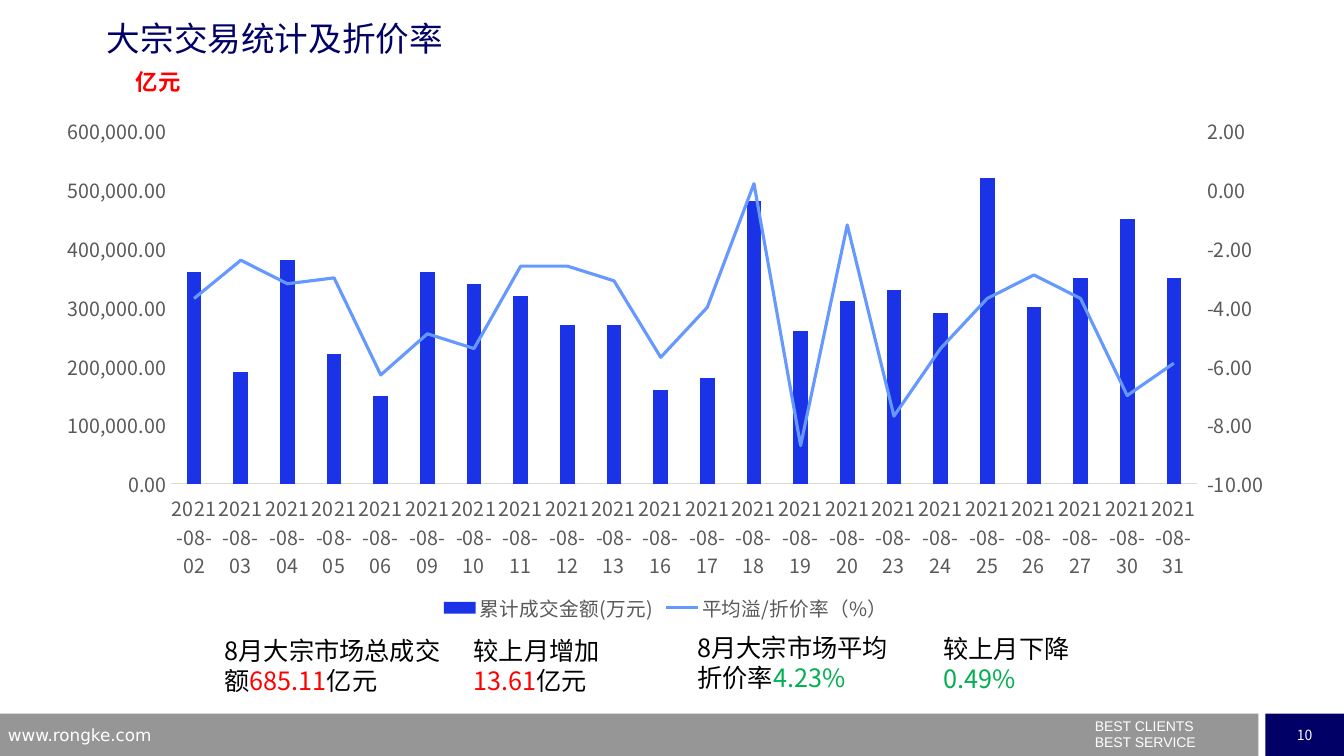
from lxml import etree
from pptx import Presentation
from pptx import util as u
from pptx.chart import data as chart_data
from pptx.dml.color import RGBColor
from pptx.enum import chart as c
from pptx.enum import shapes, text
from pptx.oxml import parse_xml
from pptx.oxml.ns import nsdecls, qn

NAVY = RGBColor(0x00, 0x00, 0x66)
GREY = RGBColor(0x96, 0x96, 0x96)
WHITE = RGBColor(0xFF, 0xFF, 0xFF)
BLACK = RGBColor(0x00, 0x00, 0x00)
RED = RGBColor(0xFF, 0x00, 0x00)
GREEN = RGBColor(0x00, 0xB0, 0x50)
AXIS_TEXT = RGBColor(0x59, 0x59, 0x59)
AXIS_LINE = RGBColor(0xD9, 0xD9, 0xD9)
BAR_BLUE = RGBColor(0x1B, 0x33, 0xE7)
LINE_BLUE = RGBColor(0x66, 0x99, 0xFF)
CJK = "Noto Sans CJK SC"


def write(frame, paragraphs, size=18, color=BLACK, font=CJK, bold=False,
          align=text.PP_ALIGN.LEFT, anchor=text.MSO_ANCHOR.TOP, wrap=True):
    """Each paragraph is a list of strings or (string, color) pairs."""
    frame.word_wrap = wrap
    frame.vertical_anchor = anchor
    for index, pieces in enumerate(paragraphs):
        paragraph = frame.add_paragraph() if index else frame.paragraphs[0]
        paragraph.alignment = align
        for piece in pieces:
            words, tint = (piece, color) if isinstance(piece, str) else piece
            run = paragraph.add_run()
            run.text = words
            run.font.size = u.Pt(size)
            run.font.name = font
            run.font.bold = bold
            run.font.color.rgb = tint
            etree.SubElement(run.font._element, qn("a:ea")).set("typeface", font)
    return frame


def style_font(font, color=AXIS_TEXT):
    font.size = u.Pt(14)
    font.name = CJK
    font.color.rgb = color


prs = Presentation()
prs.slide_width = u.Inches(13.33)
prs.slide_height = u.Inches(7.5)
slide = prs.slides.add_slide(prs.slide_layouts[5])

# Footer bars
footer_bars = []
for left, width, fill in [(0, 12.48, GREY), (12.55, 0.78, NAVY)]:
    bar = slide.shapes.add_shape(shapes.MSO_SHAPE.RECTANGLE, u.Inches(left),
                                 u.Inches(7.08), u.Inches(width), u.Inches(0.42))
    bar.shadow.inherit = False
    bar.fill.solid()
    bar.fill.fore_color.rgb = fill
    bar.line.fill.background()
    footer_bars.append(bar)
write(footer_bars[1].text_frame, [["10"]], size=10, color=WHITE, wrap=False,
      align=text.PP_ALIGN.CENTER, anchor=text.MSO_ANCHOR.MIDDLE)

# Title
title = slide.shapes.title
title.left, title.top = u.Inches(1.06), u.Inches(0.18)
title.width, title.height = u.Inches(3.54), u.Inches(0.51)
heading = write(title.text_frame, [["大宗交易统计及折价率"]], size=24, color=NAVY)
heading.auto_size = text.MSO_AUTO_SIZE.NONE
heading.margin_left = heading.margin_right = 0
heading.margin_top = heading.margin_bottom = 0

# Footer texts, monthly findings and axis unit
captions = [
    (10.76, 7.14, 2.56, 0.36, [["BEST CLIENTS"], ["BEST SERVICE"]],
     dict(size=10, color=WHITE, font="Arial")),
    (-0.02, 7.14, 3.22, 0.26, [["www.rongke.com"]],
     dict(size=12, color=WHITE, font="DejaVu Sans")),
    (2.13, 6.25, 2.38, 0.71, [["8月大宗市场总成交额", ("685.11", RED), "亿元"]], {}),
    (4.6, 6.25, 1.92, 0.71, [["较上月增加"], [("13.61", RED), "亿元"]], {}),
    (6.82, 6.22, 2.17, 0.71, [["8月大宗市场平均折价率", ("4.23%", GREEN)]], {}),
    (9.26, 6.23, 1.65, 0.71, [["较上月下降", ("0.49%", GREEN)]], {}),
    (1.25, 0.63, 0.69, 0.37, [["亿元"]], dict(size=16, color=RED, bold=True)),
]
frames = []
for left, top, width, height, paragraphs, look in captions:
    box = slide.shapes.add_textbox(u.Inches(left), u.Inches(top),
                                   u.Inches(width), u.Inches(height))
    frames.append(write(box.text_frame, paragraphs, **look))
slogan = frames[0].paragraphs
for line in slogan:
    line.line_spacing = 0.5
slogan[1].space_before = u.Pt(5.6)

# Chart data: turnover and average premium/discount per trading day
days = [2, 3, 4, 5, 6, 9, 10, 11, 12, 13, 16, 17, 18, 19, 20, 23, 24, 25, 26, 27, 30, 31]
turnover = [360000, 190000, 380000, 220000, 150000, 360000, 340000, 320000,
            270000, 270000, 160000, 180000, 480000, 260000, 310000, 330000,
            290000, 520000, 300000, 350000, 450000, 350000]
discount = [-3.7, -2.4, -3.2, -3, -6.3, -4.9, -5.4, -2.6, -2.6, -3.1, -5.7,
            -4, 0.2, -8.7, -1.2, -7.7, -5.4, -3.7, -2.9, -3.7, -7, -5.9]
trades = chart_data.CategoryChartData()
trades.categories = [f"2021-08-{day:02d}" for day in days]
trades.add_series("累计成交金额(万元)", turnover, "#,##0.00")
trades.add_series("平均溢/折价率（%）", discount, "0.00")
chart = slide.shapes.add_chart(c.XL_CHART_TYPE.COLUMN_CLUSTERED, u.Inches(0.42),
                               u.Inches(1.05), u.Inches(12.37), u.Inches(5.16),
                               trades).chart
style_font(chart.font, BLACK)
chart.has_title = False
chart.has_legend = True
chart.legend.position = c.XL_LEGEND_POSITION.BOTTOM
chart.legend.include_in_layout = False
style_font(chart.legend.font)

# Columns and left axes
columns = chart.plots[0]
columns.vary_by_categories = False
columns.gap_width = 219
columns.overlap = -27
columns.series[0].format.fill.solid()
columns.series[0].format.fill.fore_color.rgb = BAR_BLUE
amount_axis, date_axis = chart.value_axis, chart.category_axis
for axis in (amount_axis, date_axis):
    axis.has_major_gridlines = False
    axis.major_tick_mark = c.XL_TICK_MARK.NONE
    axis.minor_tick_mark = c.XL_TICK_MARK.NONE
    style_font(axis.tick_labels.font)
amount_axis.minimum_scale, amount_axis.maximum_scale = 0, 600000
amount_axis.major_unit = 100000
amount_axis.tick_labels.number_format = "#,##0.00"
amount_axis.tick_labels.number_format_is_linked = False
amount_axis.format.line.fill.background()
date_axis.tick_label_position = c.XL_TICK_LABEL_POSITION.LOW
date_axis.format.line.color.rgb = AXIS_LINE
date_axis.format.line.width = u.Pt(0.75)

# Discount rate as a line on a second axis
plot_area = chart._chartSpace.chart.plotArea
bar_group = plot_area.find(qn("c:barChart"))
rate = bar_group.findall(qn("c:ser"))[1]
for bar_setting in rate.findall(qn("c:invertIfNegative")):
    rate.remove(bar_setting)
line_group = parse_xml(
    f'<c:lineChart {nsdecls("c")}><c:grouping val="standard"/><c:varyColors val="0"/>'
    '<c:marker val="1"/><c:axId val="5001"/><c:axId val="5002"/></c:lineChart>')
line_group.insert(2, rate)
bar_group.addnext(line_group)
rate_axis = parse_xml(
    f'<c:valAx {nsdecls("c", "a")}><c:axId val="5002"/>'
    '<c:scaling><c:orientation val="minMax"/><c:max val="2"/><c:min val="-10"/></c:scaling>'
    '<c:delete val="0"/><c:axPos val="r"/><c:numFmt formatCode="0.00" sourceLinked="0"/>'
    '<c:majorTickMark val="out"/><c:minorTickMark val="none"/><c:tickLblPos val="nextTo"/>'
    '<c:spPr><a:ln><a:noFill/></a:ln></c:spPr>'
    f'<c:txPr><a:bodyPr/><a:p><a:pPr><a:defRPr sz="1400"><a:solidFill><a:srgbClr val="{AXIS_TEXT}"/>'
    f'</a:solidFill><a:latin typeface="{CJK}"/></a:defRPr></a:pPr><a:endParaRPr/></a:p></c:txPr>'
    '<c:crossAx val="5001"/><c:crosses val="max"/><c:crossBetween val="between"/>'
    '<c:majorUnit val="2"/></c:valAx>')
hidden_dates = parse_xml(
    f'<c:catAx {nsdecls("c")}><c:axId val="5001"/>'
    '<c:scaling><c:orientation val="minMax"/></c:scaling><c:delete val="1"/>'
    '<c:axPos val="b"/><c:crossAx val="5002"/><c:crosses val="autoZero"/></c:catAx>')
plot_area.find(qn("c:valAx")).addnext(rate_axis)
rate_axis.addnext(hidden_dates)
rate_line = chart.plots[1].series[0]
rate_line.smooth = False
rate_line.marker.style = c.XL_MARKER_STYLE.NONE
rate_line.format.line.color.rgb = LINE_BLUE
rate_line.format.line.width = u.Pt(2.25)

# Place of the plot inside the chart
for layout in plot_area.findall(qn("c:layout")):
    plot_area.remove(layout)
plot_area.insert(0, parse_xml(
    f'<c:layout {nsdecls("c")}><c:manualLayout><c:layoutTarget val="inner"/>'
    '<c:xMode val="edge"/><c:yMode val="edge"/><c:x val="0.103"/><c:y val="0.048"/>'
    '<c:w val="0.823"/><c:h val="0.679"/></c:manualLayout></c:layout>'))

prs.save("out.pptx")
